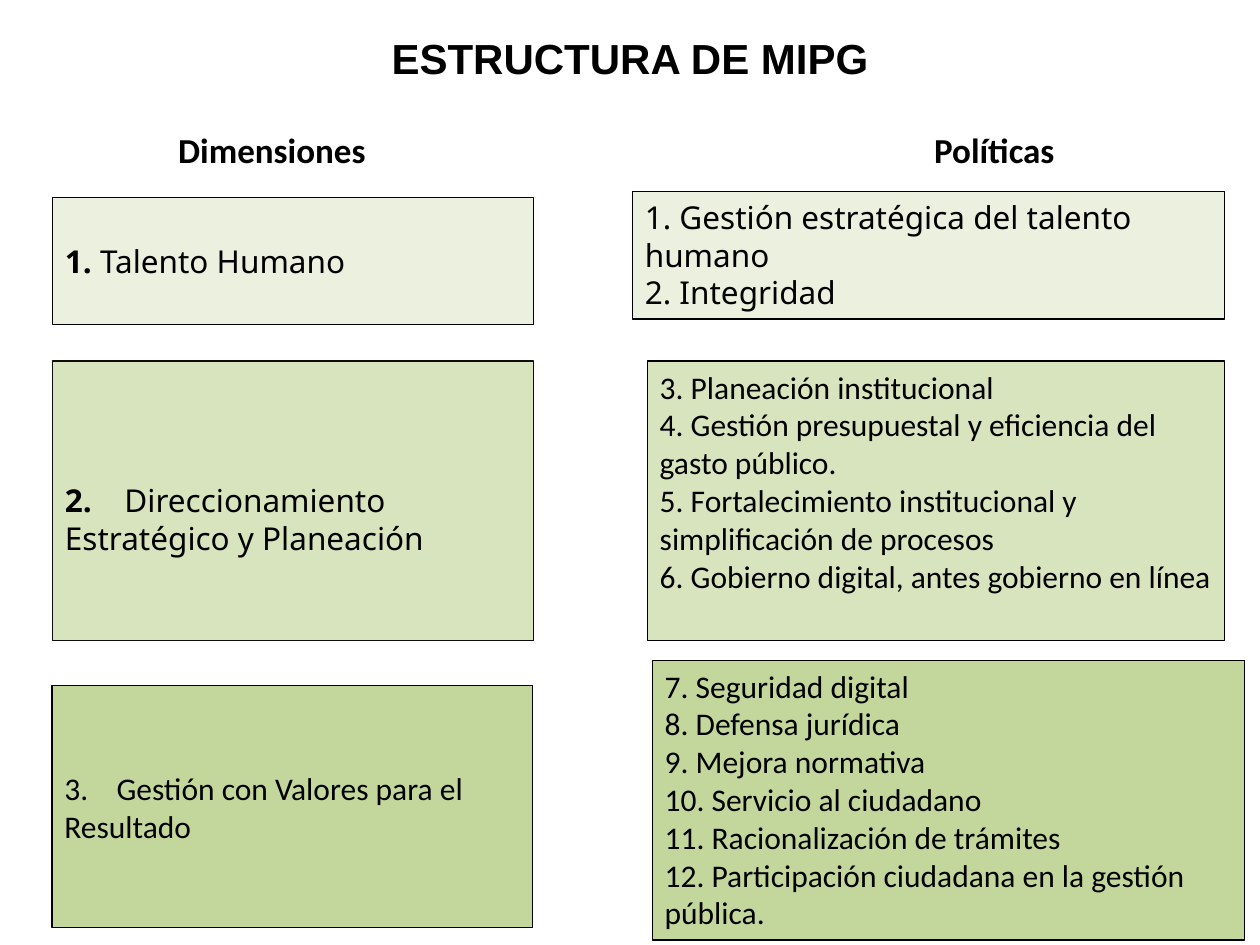
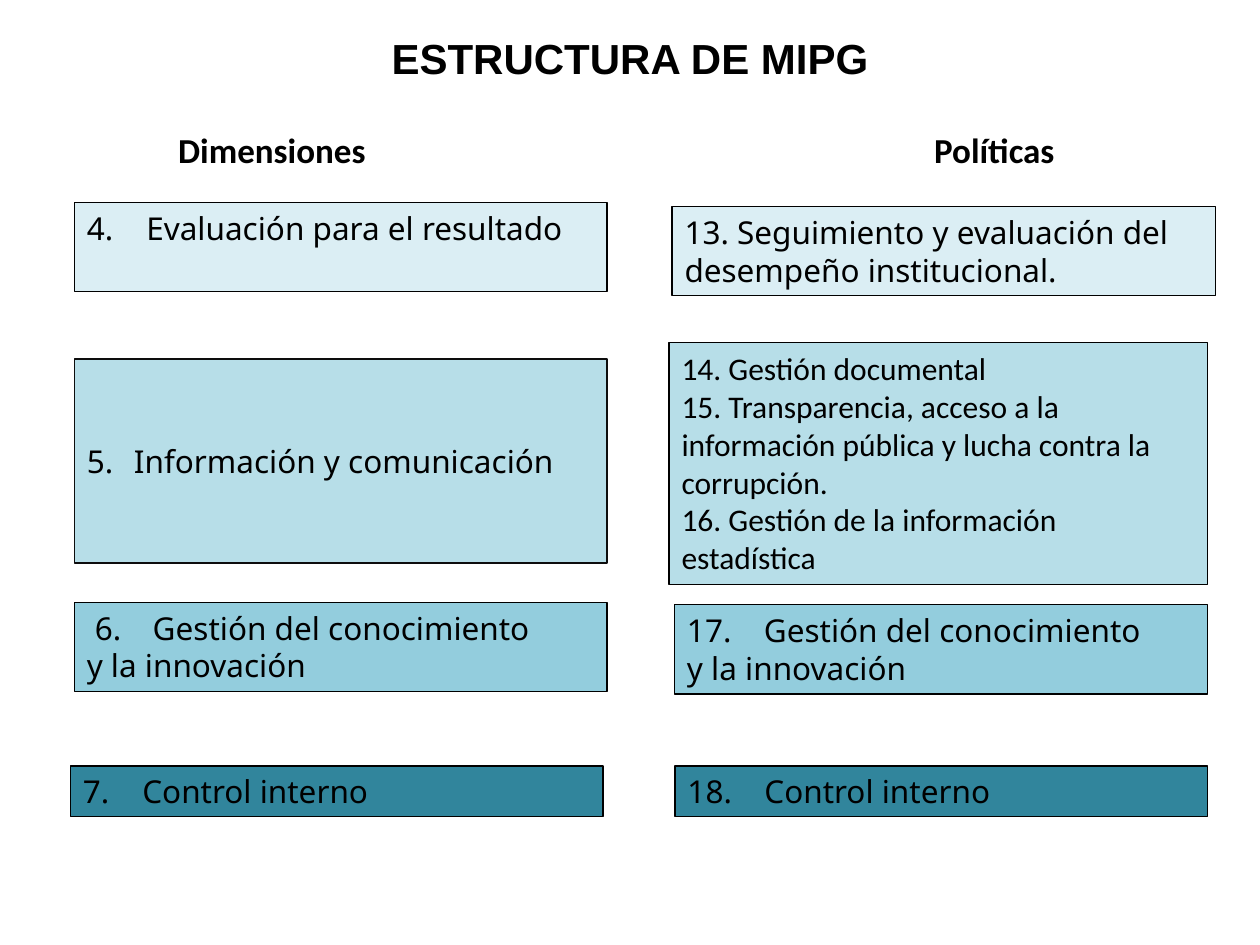
from lxml.etree import SubElement
from pptx import Presentation
from pptx.dml.color import RGBColor
from pptx.enum.shapes import MSO_SHAPE as Preset
from pptx.enum.text import MSO_ANCHOR as Anchor, MSO_AUTO_SIZE as AutoSize, PP_ALIGN as Align
from pptx.oxml.ns import qn
from pptx.util import Cm, Pt

BLACK, SOFT_BLACK = "000000", "0D0D0D"
SANS, HUMANIST = "Noto Sans", "Calibri"
TWO_CONTENT_LAYOUT = 3
TITLE_AREA = (2.06, 0.66, 21.28, 1.02)
HEADING_AREAS = ((3.59, 2.59, 7.15, 1), (18.83, 2.59, 5.85, 1))


def color(hex_string):
    return RGBColor.from_string(hex_string)


def set_font(paragraph, name, size, bold=False):
    font = paragraph.font
    font.name, font.size, font.bold = name, Pt(size), bold
    font.color.rgb = color(BLACK)


def set_tab(paragraph, position):
    """Add a left tab stop, in centimetres; call before setting the font."""
    tab_list = SubElement(paragraph._p.get_or_add_pPr(), qn("a:tabLst"))
    SubElement(tab_list, qn("a:tab"), pos=str(Cm(position)), algn="l")


def set_number(paragraph, start, indent):
    """Number a paragraph automatically; call before setting the font."""
    properties = paragraph._p.get_or_add_pPr()
    properties.set("marL", str(Cm(indent)))
    properties.set("indent", str(-Cm(indent)))
    SubElement(properties, qn("a:buAutoNum"), type="arabicPeriod", startAt=str(start))


def remove_bullet(paragraph):
    """Clear bullet and indent; call before setting the font."""
    properties = paragraph._p.get_or_add_pPr()
    properties.set("marL", "0")
    properties.set("indent", "0")
    SubElement(properties, qn("a:buNone"))


class Deck:
    def __init__(self):
        self.presentation = Presentation()
        self.presentation.slide_width = Cm(25.4)
        self.presentation.slide_height = Cm(19.05)
        self.slide = None

    def add_slide(self, title, headings):
        layout = self.presentation.slide_layouts[TWO_CONTENT_LAYOUT]
        self.slide = self.presentation.slides.add_slide(layout)
        paragraph = self.fill_placeholder(0, TITLE_AREA, title)
        paragraph.alignment = Align.CENTER
        set_font(paragraph, "Arial", 24, bold=True)

        for index, (area, heading) in enumerate(zip(HEADING_AREAS, headings), start=1):
            paragraph = self.fill_placeholder(index, area, heading)
            remove_bullet(paragraph)
            paragraph.space_before = Pt(0)
            set_font(paragraph, HUMANIST, 20, bold=True)

    def fill_placeholder(self, index, area, text):
        placeholder = self.slide.placeholders[index]
        placeholder.left, placeholder.top, placeholder.width, placeholder.height = map(Cm, area)
        frame = placeholder.text_frame
        frame.auto_size = AutoSize.NONE
        frame.margin_left = frame.margin_right = frame.margin_top = frame.margin_bottom = 0
        frame.text = text
        return frame.paragraphs[0]

    def add_box(self, area, fill, lines, font=SANS, anchor=Anchor.TOP, line=BLACK,
                tab=None, start=None, bold_number=False, top_margin=0.13):
        shape = self.slide.shapes.add_shape(Preset.RECTANGLE, *map(Cm, area))
        shape.shadow.inherit = False
        shape.fill.solid()
        shape.fill.fore_color.rgb = color(fill)
        shape.line.color.rgb = color(line)
        shape.line.width = Pt(0.75)
        frame = shape.text_frame
        frame.word_wrap = True
        frame.vertical_anchor = anchor
        frame.margin_top = Cm(top_margin)
        for index, text in enumerate(lines):
            paragraph = frame.add_paragraph() if index else frame.paragraphs[0]
            if start:
                set_number(paragraph, start, tab)
            elif tab:
                set_tab(paragraph, tab)
            paragraph.alignment = Align.LEFT
            set_font(paragraph, font, 18)
            if bold_number:
                number, dot, name = text.partition(".")
                run = paragraph.add_run()
                run.text = number + dot
                run.font.bold = True
                paragraph.add_run().text = name
            else:
                paragraph.text = text


def add_first_dimensions(deck):
    pale, light, medium = "EBF1DE", "D7E4BD", "C3D69B"
    deck.add_box((1.06, 3.98, 9.69, 2.57), pale, ["1. Talento Humano"],
                 anchor=Anchor.MIDDLE, bold_number=True)
    deck.add_box((1.06, 7.28, 9.69, 5.64), light,
                 ["2.\tDireccionamiento Estratégico y Planeación"], anchor=Anchor.MIDDLE,
                 line=SOFT_BLACK, tab=1.2, bold_number=True, top_margin=0.84)
    deck.add_box((13.05, 7.28, 11.64, 5.64), light, [
        "3. Planeación institucional",
        "4. Gestión presupuestal y eficiencia del gasto público.",
        "5. Fortalecimiento institucional y simplificación de procesos",
        "6. Gobierno digital, antes gobierno en línea"], font=HUMANIST)
    deck.add_box((1.05, 13.82, 9.69, 4.88), medium,
                 ["3.\tGestión con Valores para el Resultado"],
                 font=HUMANIST, anchor=Anchor.MIDDLE, tab=1.05)
    deck.add_box((13.15, 13.31, 11.94, 5.64), medium, [
        "7. Seguridad digital", "8. Defensa jurídica", "9. Mejora normativa",
        "10. Servicio al ciudadano", "11. Racionalización de trámites",
        "12. Participación ciudadana en la gestión pública."], font=HUMANIST)
    deck.add_box((12.75, 3.86, 11.94, 2.57), pale,
                 ["1. Gestión estratégica del talento humano", "2. Integridad"])


def add_last_dimensions(deck):
    pale, light, medium, dark = "DBEEF4", "B7DEE8", "93CDDD", "31859C"
    knowledge = "Gestión del conocimiento\vy la innovación"
    control = "Control interno"
    deck.add_box((1.5, 4.08, 10.74, 1.8), pale, ["4.\tEvaluación para el resultado"], tab=1.2)
    deck.add_box((1.5, 7.24, 10.74, 4.11), light, ["Información y comunicación"],
                 anchor=Anchor.MIDDLE, line=SOFT_BLACK, tab=0.95, start=5)
    deck.add_box((13.49, 6.91, 10.85, 4.88), light, [
        "14. Gestión documental",
        "15. Transparencia, acceso a la información pública y lucha contra la corrupción.",
        "16. Gestión de la información estadística"], font=HUMANIST)
    deck.add_box((1.5, 12.14, 10.74, 1.8), medium, [" 6.\t" + knowledge], tab=1.33)
    deck.add_box((13.6, 12.19, 10.74, 1.8), medium, ["17.\t" + knowledge], tab=1.55)
    deck.add_box((13.55, 4.16, 10.95, 1.8), pale,
                 ["13. Seguimiento y evaluación del desempeño institucional."])
    deck.add_box((1.42, 15.44, 10.74, 1.02), dark, ["7.\t" + control], tab=1.2)
    deck.add_box((13.61, 15.44, 10.74, 1.02), dark, ["18.\t" + control], tab=1.55)


def main():
    deck = Deck()
    for add_dimensions in (add_first_dimensions, add_last_dimensions):
        deck.add_slide("ESTRUCTURA DE MIPG", ("Dimensiones", "Políticas"))
        add_dimensions(deck)
    deck.presentation.save("out.pptx")


if __name__ == "__main__":
    main()
